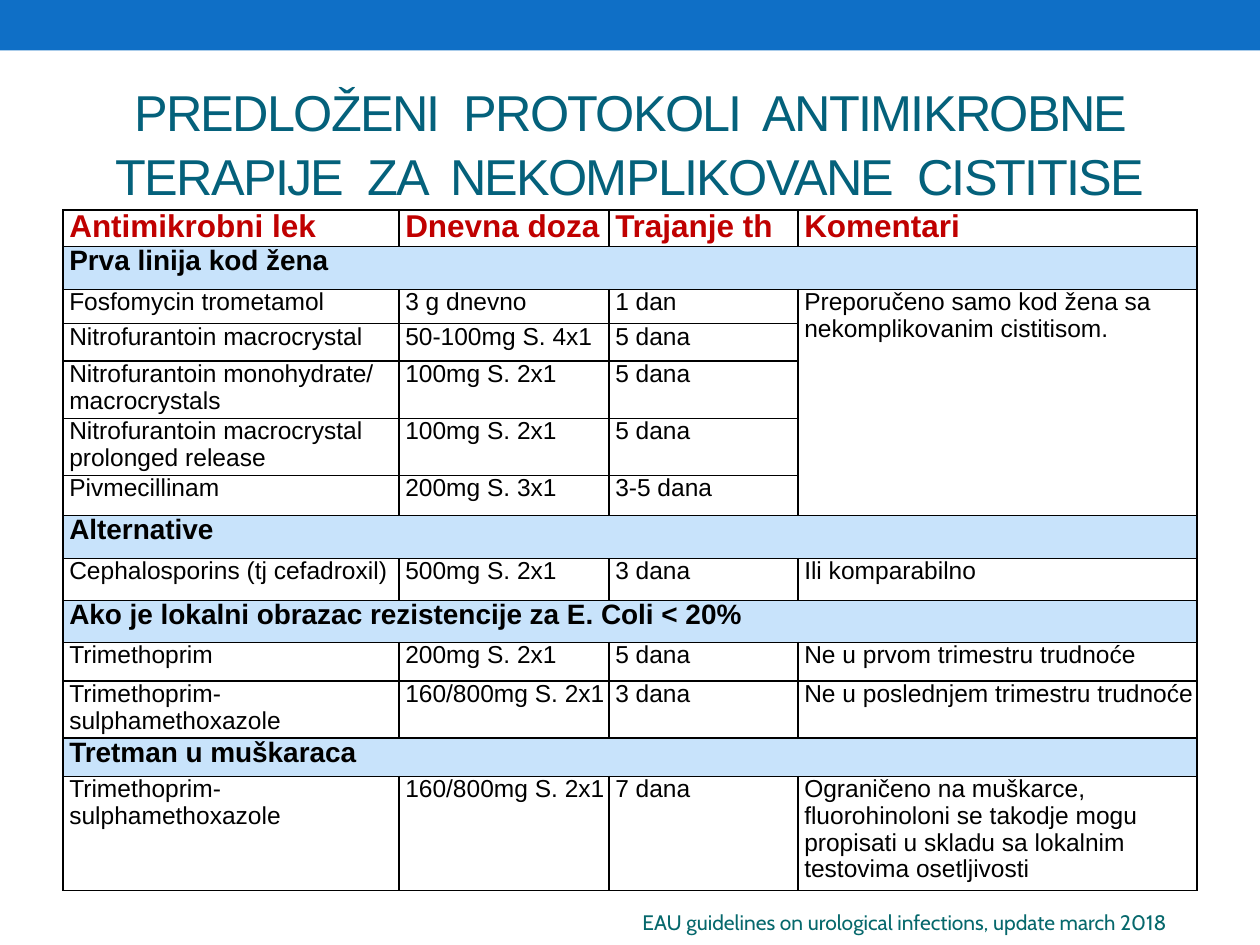
"""Build a slide with a table of antimicrobial protocols for uncomplicated cystitis."""
from lxml.etree import SubElement
from pptx import Presentation
from pptx.dml.color import RGBColor
from pptx.enum.shapes import MSO_SHAPE as SHAPE
from pptx.enum.text import MSO_ANCHOR as ANCHOR, PP_ALIGN as ALIGN
from pptx.oxml.ns import qn
from pptx.util import Pt

COLORS = {
    "bar": "0F6FC6", "title": "04617B", "header": "C00000", "text": "000000",
    "band": "C8E3FB", "source": "06686C", "border": "000000",
}


def add_run(p, text, size, color, font="Arial", bold=False):
    r = p.add_run()
    r.text = text
    r.font.size = Pt(size)
    r.font.name = font
    r.font.bold = bold
    r.font.color.rgb = RGBColor.from_string(COLORS[color])
    return r


def add_borders(cell):
    tc_pr = cell._tc.get_or_add_tcPr()
    for i, side in enumerate(("a:lnL", "a:lnR", "a:lnT", "a:lnB")):
        ln = SubElement(tc_pr, qn(side), w=str(Pt(1)))
        fill = SubElement(ln, qn("a:solidFill"))
        SubElement(fill, qn("a:srgbClr"), val=COLORS["border"])
        tc_pr.remove(ln)
        tc_pr.insert(i, ln)


prs = Presentation()
prs.slide_width, prs.slide_height = Pt(720), Pt(540)
s = prs.slides.add_slide(prs.slide_layouts[6])

bar = s.shapes.add_shape(SHAPE.RECTANGLE, 0, 0, Pt(720), Pt(28.8))
bar.shadow.inherit = False
bar.fill.solid()
bar.fill.fore_color.rgb = RGBColor.from_string(COLORS["bar"])
bar.line.fill.background()

title = s.shapes.add_textbox(Pt(36), Pt(42), Pt(648), Pt(78))
tf = title.text_frame
tf.word_wrap = True
tf.vertical_anchor = ANCHOR.MIDDLE
p = tf.paragraphs[0]
p.alignment = ALIGN.CENTER
p.line_spacing = 1.05
r = add_run(p, "PREDLOŽENI  PROTOKOLI  ANTIMIKROBNE TERAPIJE  ZA  NEKOMPLIKOVANE  CISTITISE", 28.8, "title")
r.font._element.set("spc", "-100")

rows = [
    (20.3, ["Antimikrobni lek", "Dnevna doza", "Trajanje th", "Komentari"]),
    (24.5, ["Prva linija kod žena"]),
    (19.5, ["Fosfomycin trometamol", "3 g dnevno", "1 dan",
            "Preporučeno samo kod žena sa nekomplikovanim cistitisom."]),
    (21.5, ["Nitrofurantoin macrocrystal", "50-100mg S. 4x1", "5 dana"]),
    (31.5, ["Nitrofurantoin monohydrate/ macrocrystals", "100mg S. 2x1", "5 dana"]),
    (31.5, ["Nitrofurantoin macrocrystal prolonged release", "100mg S. 2x1", "5 dana"]),
    (23, ["Pivmecillinam", "200mg S. 3x1", "3-5 dana"]),
    (24.5, ["Alternative"]),
    (24, ["Cephalosporins (tj cefadroxil)", "500mg S. 2x1", "3 dana", "Ili komparabilno"]),
    (24, ["Ako je lokalni obrazac rezistencije za E. Coli < 20%"]),
    (22, ["Trimethoprim", "200mg S. 2x1", "5 dana", "Ne u prvom trimestru trudnoće"]),
    (31.5, ["Trimethoprim-sulphamethoxazole", "160/800mg S. 2x1", "3 dana",
            "Ne u poslednjem trimestru trudnoće"]),
    (22, ["Tretman u muškaraca"]),
    (63, ["Trimethoprim-sulphamethoxazole", "160/800mg S. 2x1", "7 dana",
          "Ograničeno na muškarce, fluorohinoloni se takodje mogu propisati u skladu sa lokalnim testovima osetljivosti"]),
]
widths = [192, 120, 108, 228]
height = sum(h for h, _ in rows)
table = s.shapes.add_table(len(rows), len(widths), Pt(36), Pt(120), Pt(648), Pt(height)).table
table.horz_banding = False
for col, width in zip(table.columns, widths):
    col.width = Pt(width)

for i, (row_height, texts) in enumerate(rows):
    table.rows[i].height = Pt(row_height)
    is_band = len(texts) == 1
    size, color = (18, "header") if i == 0 else (16 if is_band else 14, "text")
    for j in range(len(widths)):
        cell = table.cell(i, j)
        cell.margin_left = Pt(3.6)
        cell.margin_right = cell.margin_top = cell.margin_bottom = 0
        if is_band:
            cell.fill.solid()
            cell.fill.fore_color.rgb = RGBColor.from_string(COLORS["band"])
        else:
            cell.fill.background()
        add_borders(cell)
        if j < len(texts):
            p = cell.text_frame.paragraphs[0]
            p.line_spacing = 0.97
            add_run(p, texts[j], size, color, bold=i == 0 or is_band)
    if is_band:
        table.cell(i, 0).merge(table.cell(i, 3))
table.cell(2, 3).merge(table.cell(6, 3))

source = s.shapes.add_textbox(Pt(360), Pt(516.3), Pt(332.6), Pt(21.6))
tf = source.text_frame
tf.word_wrap = False
add_run(tf.paragraphs[0], "EAU guidelines on urological infections, update march 2018", 12, "source", "Cabin")

prs.save("out.pptx")
